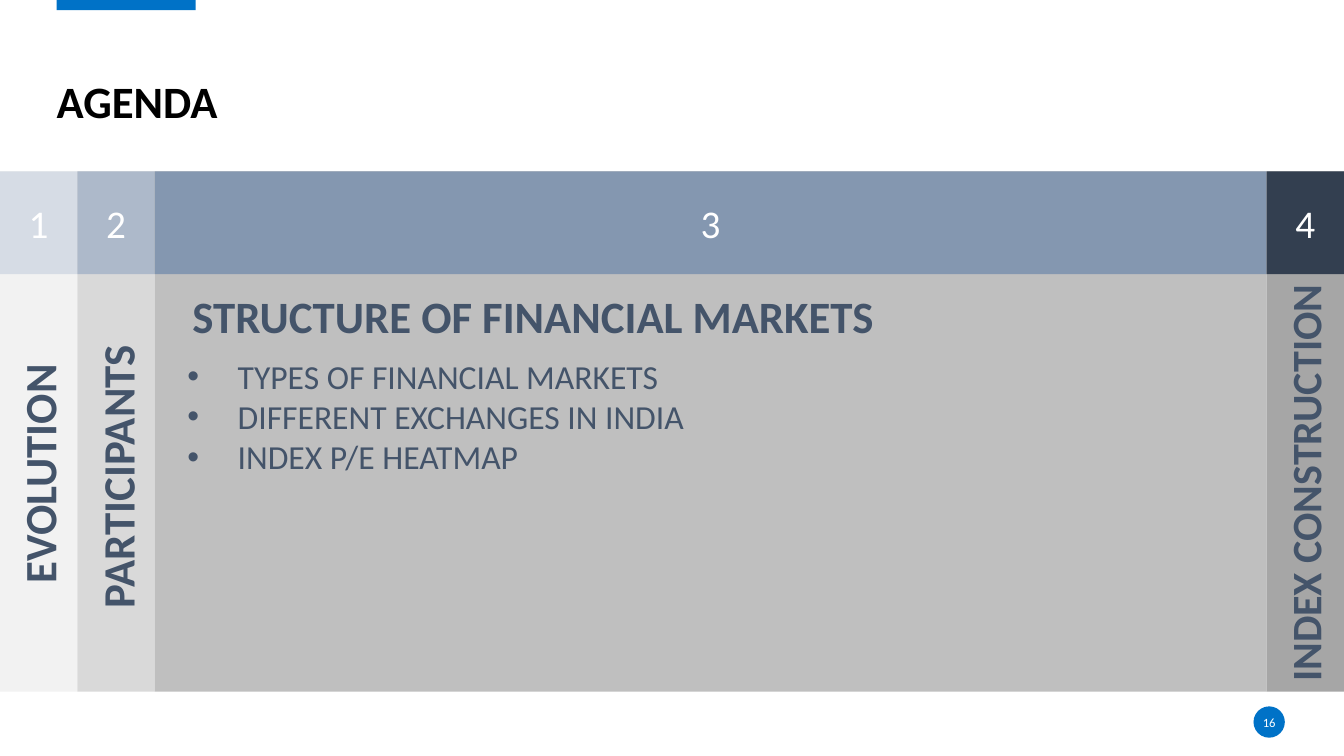
from pptx import Presentation
from pptx.dml.color import RGBColor
from pptx.enum import shapes, text
from pptx.oxml import parse_xml
from pptx.oxml.ns import nsdecls
from pptx.util import Cm, Pt

BLACK = RGBColor(0x00, 0x00, 0x00)
WHITE = RGBColor(0xFF, 0xFF, 0xFF)
BLUE = RGBColor(0x00, 0x72, 0xC7)
SLATE = RGBColor(0x44, 0x54, 0x6A)
HEADS = [RGBColor(0xD6, 0xDC, 0xE5), RGBColor(0xAD, 0xB9, 0xCA),
         RGBColor(0x84, 0x97, 0xB0), RGBColor(0x33, 0x3F, 0x50)]
BODIES = [RGBColor(0xF2, 0xF2, 0xF2), RGBColor(0xD9, 0xD9, 0xD9),
          RGBColor(0xBF, 0xBF, 0xBF), RGBColor(0xA6, 0xA6, 0xA6)]

WIDE, HIGH = 33.87, 19.05
TOP, HEAD, FULL = 4.32, 2.59, 13.11
THIN = 1.95
WIDTHS = [THIN, THIN, WIDE - 3 * THIN, THIN]

LEFT, MID = text.PP_ALIGN.LEFT, text.PP_ALIGN.CENTER
RECT, OVAL = shapes.MSO_SHAPE.RECTANGLE, shapes.MSO_SHAPE.OVAL
BOLD = {"size": Pt(32), "bold": True, "color": SLATE}
ITEM = {"size": Pt(24), "color": SLATE}
DIGIT = {"size": Pt(28), "color": WHITE}


def style(font, form):
    for key, val in {"name": "Calibri", **form}.items():
        if key == "color":
            font.color.rgb = val
        else:
            setattr(font, key, val)


def write(frame, lines, form, align=LEFT, **opts):
    """Fill a text frame; opts are frame attributes such as margins."""
    for key, val in {"word_wrap": True, **opts}.items():
        setattr(frame, key, val)
    for num, line in enumerate(lines):
        para = frame.add_paragraph() if num else frame.paragraphs[0]
        para.alignment = align
        run = para.add_run()
        run.text = line
        style(run.font, form)


def add_block(slide, kind, box, fill):
    block = slide.shapes.add_shape(kind, *map(Cm, box))
    block.shadow.inherit = False
    block.fill.solid()
    block.fill.fore_color.rgb = fill
    block.line.fill.background()
    return block


def add_text(slide, box, lines, form, align=LEFT, **opts):
    label = slide.shapes.add_textbox(*map(Cm, box))
    write(label.text_frame, lines, form, align, **opts)
    return label


def add_side(slide, x, y, size, line, form):
    """Add text that reads upwards, centred on x, y."""
    wide, high = size
    box = (x - wide / 2, y - high / 2, wide, high)
    add_text(slide, box, [line], form).rotation = 270


def add_list(slide, box, lines):
    label = add_text(slide, box, lines, ITEM)
    for para in label.text_frame.paragraphs:
        props = para._p.get_or_add_pPr()
        props.set("marL", str(Cm(1.27)))
        props.set("indent", str(-Cm(1.27)))
        for tag in ('a:buFont %s typeface="Arial"', 'a:buChar %s char="•"'):
            props.append(parse_xml("<" + tag % nsdecls("a") + "/>"))


def add_columns(slide):
    left = 0
    for num, wide in enumerate(WIDTHS):
        add_block(slide, RECT, (left, TOP, wide, FULL), BODIES[num])
        head = add_block(slide, RECT, (left, TOP, wide, HEAD), HEADS[num])
        write(head.text_frame, [str(num + 1)], DIGIT, MID,
              vertical_anchor=text.MSO_ANCHOR.MIDDLE)
        left += wide


def main():
    deck = Presentation()
    deck.slide_width, deck.slide_height = Cm(WIDE), Cm(HIGH)
    slide = deck.slides.add_slide(deck.slide_layouts[6])
    flat = dict.fromkeys(
        ["margin_left", "margin_top", "margin_right", "margin_bottom"], 0)

    add_block(slide, RECT, (1.43, -0.05, 3.5, 0.31), BLUE)
    title = add_text(slide, (1.43, 0.69, 30.96, 2.55), ["AGENDA"],
                     {**BOLD, "color": BLACK},
                     vertical_anchor=text.MSO_ANCHOR.BOTTOM, **flat)
    title.text_frame.paragraphs[0].line_spacing = 0.9
    page = add_block(slide, OVAL, (31.59, 17.8, 0.79, 0.79), BLUE)
    write(page.text_frame, ["16"], {"size": Pt(9), "color": WHITE}, MID,
          vertical_anchor=text.MSO_ANCHOR.MIDDLE, **{**flat, "word_wrap": False})

    add_columns(slide)
    add_side(slide, 0.98, 11.79, (6.32, 1.62), "EVOLUTION", BOLD)
    add_side(slide, 2.95, 11.79, (7.59, 1.62), "PARTICIPANTS", BOLD)
    add_side(slide, 32.89, TOP + FULL / 2, (FULL, 1.54), "INDEX CONSTRUCTION",
             {**BOLD, "size": Pt(30)})

    add_text(slide, (4.6, 7.16, 18.39, 1.62),
             ["STRUCTURE OF FINANCIAL MARKETS"], BOLD)
    add_list(slide, (4.47, 8.84, 18.34, 3.33),
             ["TYPES OF FINANCIAL MARKETS", "DIFFERENT EXCHANGES IN INDIA",
              "INDEX P/E HEATMAP"])
    deck.save("out.pptx")


if __name__ == "__main__":
    main()
